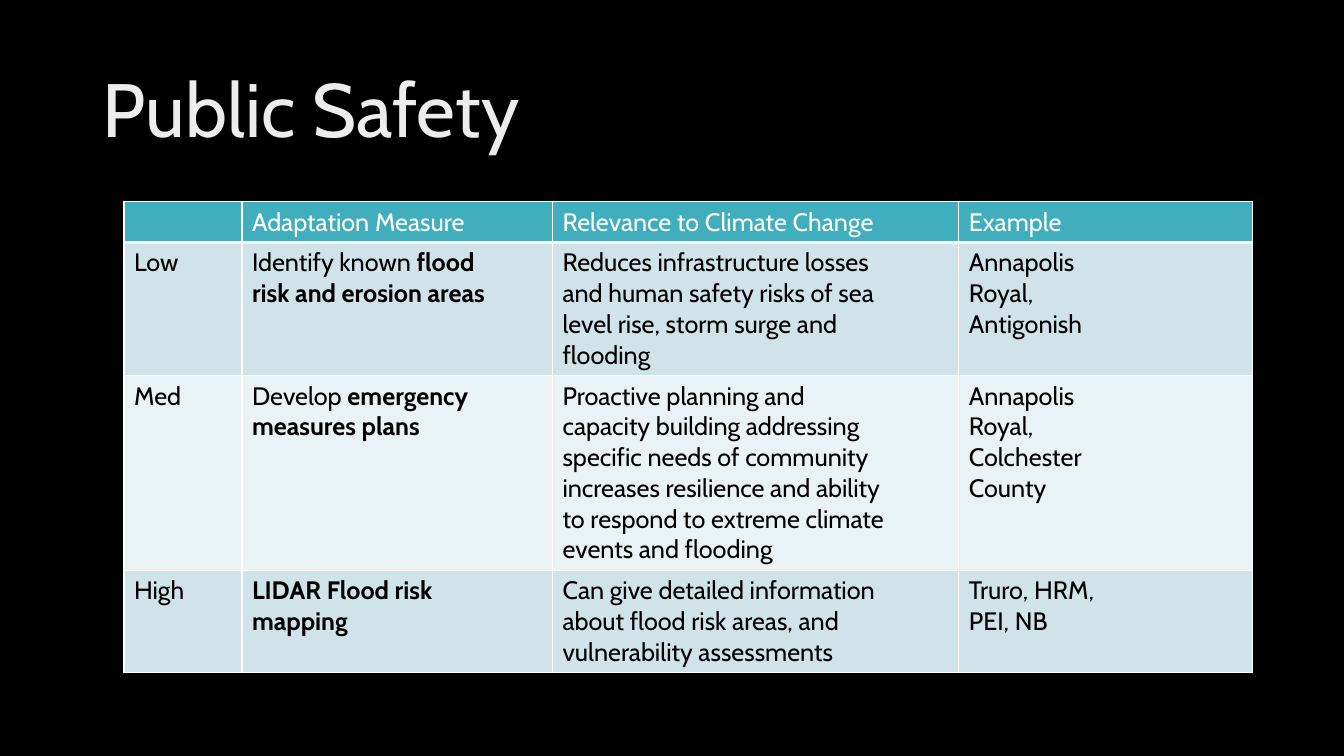
from lxml import etree
from pptx import Presentation
from pptx import util as u
from pptx.dml.color import RGBColor
from pptx.enum import text
from pptx.oxml import ns

# Content: one line per paragraph, asterisks enclose bold words
TITLE = "Public Safety"
HEADER = ["", "Adaptation Measure", "Relevance to Climate Change", "Example"]
MEASURES = [
    ["Low",
     "Identify known *flood*\n*risk and erosion areas*",
     "Reduces infrastructure losses\nand human safety risks of sea\n"
     "level rise, storm surge and\nflooding",
     "Annapolis\nRoyal,\nAntigonish"],
    ["Med",
     "Develop *emergency*\n*measures plans*",
     "Proactive planning and\ncapacity building addressing\n"
     "specific needs of community\nincreases resilience and ability\n"
     "to respond to extreme climate\nevents and flooding",
     "Annapolis\nRoyal,\nColchester\nCounty"],
    ["High",
     "*LIDAR Flood risk*\n*mapping*",
     "Can give detailed information\nabout flood risk areas, and\n"
     "vulnerability assessments",
     "Truro, HRM,\nPEI, NB"],
]

# Look
FONT = "Cabin"
COLORS = {"background": "000000", "header": "41AEBD", "odd": "CFE3E8",
          "even": "E9F2F4", "border": "FFFFFF", "header text": "FFFFFF",
          "body text": "000000"}
TITLE_GRADIENT = [(0, "BFBFBF"), (28, "EDEDED"), (100, "FFFFFF")]
TITLE_ANGLE = 80
COLUMN_WIDTHS = [1.17, 3.08, 4.03, 2.91]
TABLE_LEFT, TABLE_TOP = 1.23, 2
LINE_HEIGHT, CELL_PADDING = 0.305, 0.1


def color(name):
    return RGBColor.from_string(COLORS[name])


def add_element(parent, tag, **attributes):
    return etree.SubElement(parent, ns.qn(tag), attributes)


def set_gradient(font):
    """Give text a linear gradient with several stops."""
    gradient = etree.Element(ns.qn("a:gradFill"))
    stops = add_element(gradient, "a:gsLst")
    for position, value in TITLE_GRADIENT:
        stop = add_element(stops, "a:gs", pos=str(position * 1000))
        add_element(stop, "a:srgbClr", val=value)
    add_element(gradient, "a:lin", ang=str(TITLE_ANGLE * 60000), scaled="0")
    font._rPr.insert(0, gradient)


def set_borders(cell, bottom):
    properties = cell._tc.get_or_add_tcPr()
    widths = {"a:lnL": 1, "a:lnR": 1, "a:lnT": 1, "a:lnB": bottom}
    for index, (tag, width) in enumerate(widths.items()):
        line = etree.Element(ns.qn(tag), w=str(u.Pt(width)))
        fill = add_element(line, "a:solidFill")
        add_element(fill, "a:srgbClr", val=COLORS["border"])
        properties.insert(index, line)


def fill_cell(cell, content, fill, ink):
    cell.fill.solid()
    cell.fill.fore_color.rgb = color(fill)
    set_borders(cell, bottom=3 if fill == "header" else 1)
    frame = cell.text_frame
    for index, line in enumerate(content.split("\n")):
        paragraph = frame.add_paragraph() if index else frame.paragraphs[0]
        paragraph.font.name = FONT
        paragraph.font.size = u.Pt(18)
        paragraph.font.color.rgb = color(ink)
        for part, words in enumerate(line.split("*")):
            if words:
                run = paragraph.add_run()
                run.text = words
                run.font.bold = part % 2 == 1


def add_title(slide):
    title = slide.shapes.title
    title.left, title.top = u.Inches(0.92), u.Inches(0.4)
    title.width, title.height = u.Inches(11.5), u.Inches(1.45)
    title.text_frame.vertical_anchor = text.MSO_ANCHOR.MIDDLE
    paragraph = title.text_frame.paragraphs[0]
    paragraph.alignment = text.PP_ALIGN.LEFT
    paragraph.line_spacing = 0.9
    run = paragraph.add_run()
    run.text = TITLE
    run.font.name = FONT
    run.font.size = u.Pt(54)
    set_gradient(run.font)


def add_measures(slide):
    rows = [HEADER] + MEASURES
    # Each row is as tall as its longest cell
    heights = [CELL_PADDING + LINE_HEIGHT * max(c.count("\n") + 1 for c in row)
               for row in rows]
    table = slide.shapes.add_table(
        len(rows), len(HEADER), u.Inches(TABLE_LEFT), u.Inches(TABLE_TOP),
        u.Inches(sum(COLUMN_WIDTHS)), u.Inches(sum(heights))).table
    for column, width in zip(table.columns, COLUMN_WIDTHS):
        column.width = u.Inches(width)
    for index, (row, height) in enumerate(zip(rows, heights)):
        table.rows[index].height = u.Inches(height)
        fill = ("odd" if index % 2 else "even") if index else "header"
        ink = "body text" if index else "header text"
        for column, content in enumerate(row):
            fill_cell(table.cell(index, column), content, fill, ink)


def main():
    presentation = Presentation()
    presentation.slide_width = u.Inches(13.33)
    presentation.slide_height = u.Inches(7.5)
    slide = presentation.slides.add_slide(presentation.slide_layouts[5])
    slide.background.fill.solid()
    slide.background.fill.fore_color.rgb = color("background")
    add_title(slide)
    add_measures(slide)
    presentation.save("out.pptx")


if __name__ == "__main__":
    main()
